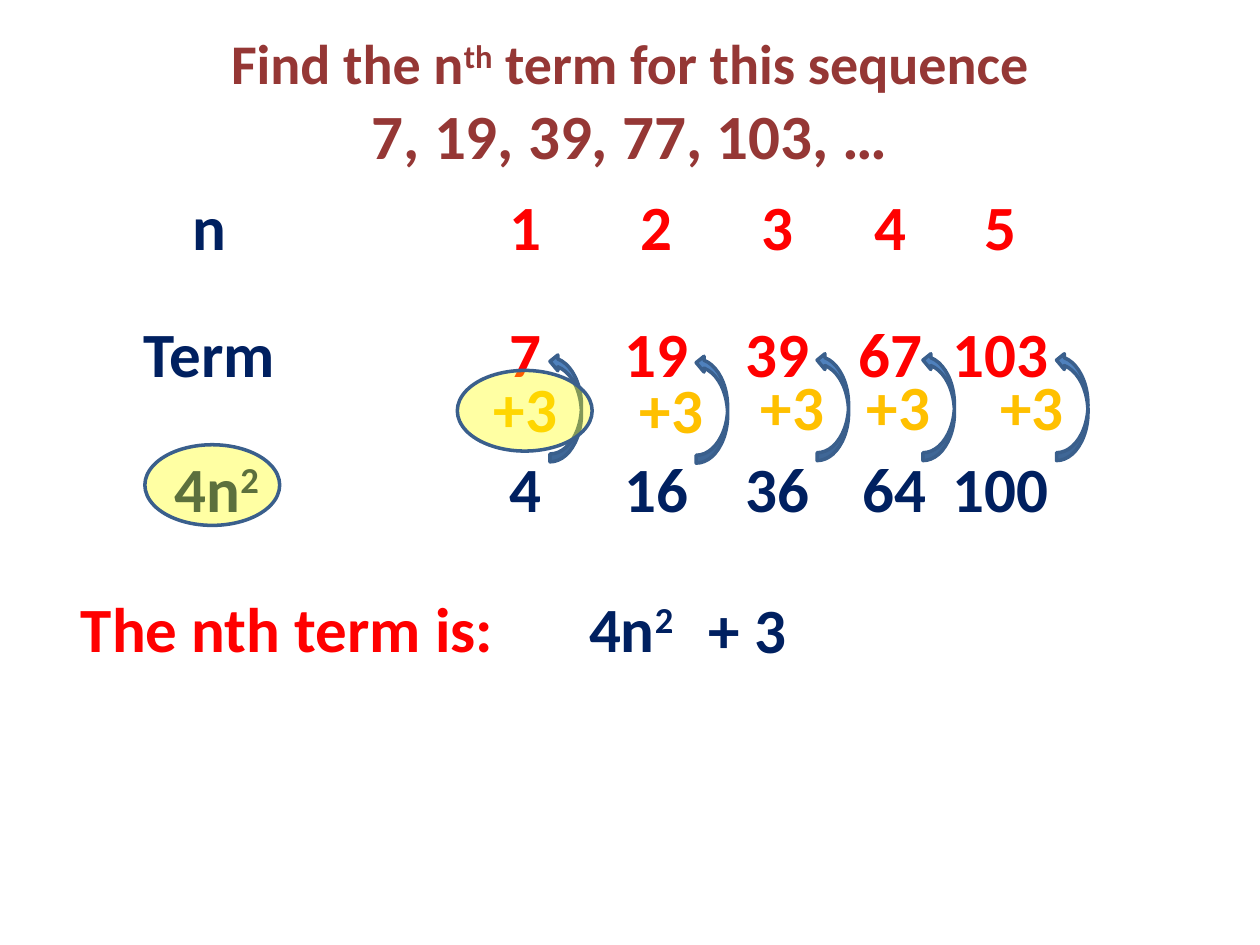
from dataclasses import dataclass

from lxml import etree
from pptx import Presentation
from pptx.dml.color import RGBColor
from pptx.enum import shapes, text
from pptx.oxml.ns import qn
from pptx.util import Inches, Pt


@dataclass(frozen=True)
class Theme:
    font: str = "Calibri"
    title: str = "953735"
    navy: str = "002060"
    red: str = "FF0000"
    gold: str = "FFC000"
    arrow: str = "4F81BD"
    outline: str = "3A5F8C"
    highlight: str = "FFFF00"
    heading_size: int = 32
    body_size: int = 36


theme = Theme()
prs = Presentation()
prs.slide_width, prs.slide_height = Inches(10), Inches(7.5)
slide = prs.slides.add_slide(prs.slide_layouts[6])


def add_label(lines, centre, top, width, color, height=0.71, wrap=False):
    """Add centred (wording, size) lines; wording between ^ marks is superscript."""
    box = slide.shapes.add_textbox(Inches(centre - width / 2), Inches(top),
                                   Inches(width), Inches(height))
    frame = box.text_frame
    frame.word_wrap = wrap
    frame.auto_size = text.MSO_AUTO_SIZE.SHAPE_TO_FIT_TEXT
    for i, (wording, size) in enumerate(lines):
        paragraph = frame.paragraphs[0] if i == 0 else frame.add_paragraph()
        paragraph.alignment = text.PP_ALIGN.CENTER
        for j, part in enumerate(wording.split("^")):
            run = paragraph.add_run()
            run.text = part
            run.font.name, run.font.size, run.font.bold = theme.font, Pt(size), True
            run.font.color.rgb = RGBColor.from_string(color)
            if j % 2:
                run.font._element.set("baseline", "30000")


def add_outlined(kind, left, top, width, height, fill):
    shape = slide.shapes.add_shape(kind, Inches(left), Inches(top),
                                   Inches(width), Inches(height))
    shape.shadow.inherit = False
    shape.fill.solid()
    shape.fill.fore_color.rgb = RGBColor.from_string(fill)
    shape.line.color.rgb = RGBColor.from_string(theme.outline)
    shape.line.width = Pt(2)
    return shape


add_label([("Find the n^th^ term for this sequence", theme.heading_size),
           ("7, 19, 39, 77, 103, …", theme.body_size)],
          5, 0.18, 9.45, theme.title, height=1.25, wrap=True)

# Rows of the sequence table: heading, heading centre and width, top, value colour, values
centres = [4.17, 5.21, 6.17, 7.07, 7.94]
digit_widths = {1: 0.47, 2: 0.71, 3: 0.97}
rows = [
    ("n", 1.66, 0.47, 1.44, theme.red, [1, 2, 3, 4, 5]),
    ("Term", 1.66, 1.25, 2.45, theme.red, [7, 19, 39, 67, 103]),
    ("4n^2^", 1.72, 0.9, 3.52, theme.navy, [4, 16, 36, 64, 100]),
]
for heading, heading_centre, heading_width, top, color, values in rows:
    add_label([(heading, theme.body_size)], heading_centre, top, heading_width, theme.navy)
    for value, centre in zip(values, centres):
        nudge = 0.03 if value == 64 else 0
        add_label([(str(value), theme.body_size)], centre + nudge, top,
                  digit_widths[len(str(value))], color)

# Each difference sits beside an arrow from 4n² up to the term
for centre, top in [(4.17, 2.88), (5.33, 2.89), (6.29, 2.87), (7.13, 2.87), (8.19, 2.87)]:
    arrow = add_outlined(shapes.MSO_SHAPE.CURVED_UP_ARROW, centre - 0.11, top + 0.23,
                         0.86, 0.25, theme.arrow)
    arrow.rotation = 270
    add_label([("+3", theme.body_size)], centre, top, 0.71, theme.gold)

for wording, centre, top, width, color in [
    ("The nth term is:", 2.28, 4.63, 3.51, theme.red),
    ("4n^2^", 5.01, 4.63, 0.9, theme.navy),
    ("+ 3", 5.93, 4.64, 0.82, theme.navy),
]:
    add_label([(wording, theme.body_size)], centre, top, width, color)

# Translucent ovals mark the two parts of the answer
for left, top in [(1.15, 3.53), (3.63, 2.94)]:
    oval = add_outlined(shapes.MSO_SHAPE.OVAL, left, top, 1.07, 0.64, theme.highlight)
    fill_color = oval._element.spPr.find(qn("a:solidFill"))[0]
    etree.SubElement(fill_color, qn("a:alpha")).set("val", "36000")

prs.save("out.pptx")
